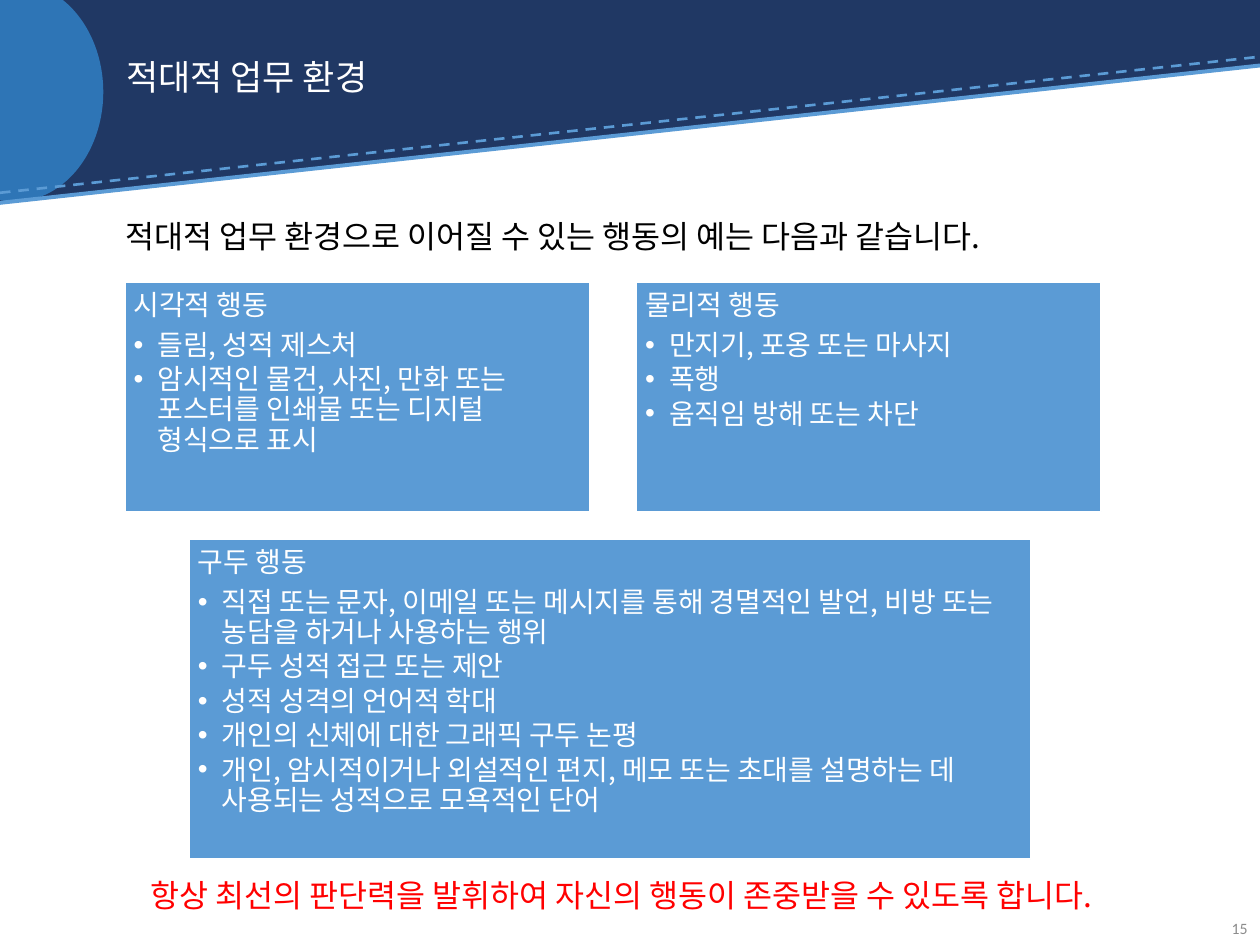
from lxml.etree import SubElement as Sub
from pptx import Presentation
from pptx.dml.color import RGBColor as Rgb
from pptx.enum.dml import MSO_LINE as Dash
from pptx.enum.shapes import MSO_CONNECTOR as Link, MSO_SHAPE as Kind
from pptx.enum.text import MSO_ANCHOR as Anchor, MSO_AUTO_SIZE as Auto, PP_ALIGN as Align
from pptx.oxml.ns import qn
from pptx.util import Inches, Pt

theme = {
    "navy": Rgb.from_string("203864"), "disc": Rgb.from_string("2E75B6"),
    "sky": Rgb.from_string("5B9BD5"), "white": Rgb.from_string("FFFFFF"),
    "black": Rgb.from_string("000000"), "red": Rgb.from_string("FF0000"),
    "gray": Rgb.from_string("8C8C8C"),
    "title": 20, "lead": 18, "body": 16, "page": 9,
    "font": "Noto Sans CJK KR", "digit": "Calibri",
}

deck = Presentation()
deck.slide_width, deck.slide_height = Inches(10), Inches(7.5)
col, row = deck.slide_width / 100, deck.slide_height / 75
slide = deck.slides.add_slide(deck.slide_layouts[5])
shapes = slide.shapes


def grid(x, y, w, h):
    return [round(n) for n in (x * col, y * row, w * col, h * row)]


def write(frame, text, size="body", color="white", font="font", align=Align.LEFT,
          first=True, bullet=False, line=None, after=0):
    para = frame.paragraphs[0] if first else frame.add_paragraph()
    para.alignment, para.line_spacing = align, line
    para.space_before, para.space_after = Pt(0), Pt(after)
    if bullet:
        para.level = 1
        props = para._p.get_or_add_pPr()
        props.set("marL", str(Inches(0.19)))
        props.set("indent", str(-Inches(0.19)))
        Sub(props, qn("a:buFont")).set("typeface", "Arial")
        Sub(props, qn("a:buChar")).set("char", "•")
    run = para.add_run()
    run.text = text
    run.font.size, run.font.name = Pt(theme[size]), theme[font]
    run.font.color.rgb = theme[color]
    Sub(run._r.get_or_add_rPr(), qn("a:ea")).set("typeface", theme[font])


for kind, place, fill in (
    (Kind.RECTANGLE, (0, 0, 100, 5.2), "navy"),
    (Kind.RIGHT_TRIANGLE, (0, 5.1, 100, 10.9), "navy"),
    (Kind.OVAL, (-5.9, -1.4, 14.1, 17.4), "disc"),
):
    part = shapes.add_shape(kind, *grid(*place))
    part.shadow.inherit = False
    part.fill.solid()
    part.fill.fore_color.rgb = theme[fill]
    part.line.fill.background()
    if kind == Kind.RIGHT_TRIANGLE:
        part._element.spPr.xfrm.set("flipV", "1")

for left, right, width, dash in (
    (15.3, 4.5, 1.5, Dash.DASH),
    (16.1, 5.2, 2.25, Dash.SOLID),
):
    edge = shapes.add_connector(Link.STRAIGHT, *grid(0, left, 100, right))
    edge.line.color.rgb = theme["sky"]
    edge.line.width, edge.line.dash_style = Pt(width), dash
    Sub(edge._element.spPr, qn("a:effectLst"))

title = shapes.title
title.left, title.top, title.width, title.height = grid(9, 2, 80.5, 8.6)
title.text_frame.vertical_anchor = Anchor.MIDDLE
write(title.text_frame, "적대적 업무 환경", size="title", line=0.9)
shapes._spTree.append(title._element)

for text, place, style in (
    ("15", (94.7, 71.7, 5.3, 4),
     dict(size="page", color="gray", font="digit", align=Align.RIGHT)),
    ("항상 최선의 판단력을 발휘하여 자신의 행동이 존중받을 수 있도록 합니다.",
     (4.1, 69, 90.4, 4), dict(size="lead", color="red", align=Align.CENTER)),
    ("적대적 업무 환경으로 이어질 수 있는 행동의 예는 다음과 같습니다.",
     (9, 16.7, 85.8, 4), dict(size="lead", color="black")),
):
    frame = shapes.add_textbox(*grid(*place)).text_frame
    frame.word_wrap = True
    if text == "15":
        frame.vertical_anchor = Anchor.MIDDLE
    else:
        frame.auto_size = Auto.SHAPE_TO_FIT_TEXT
    write(frame, text, **style)

cards = (
    ((9.9, 22.4, 36.9, 18.2), "시각적 행동", (
        "들림, 성적 제스처",
        "암시적인 물건, 사진, 만화 또는 포스터를 인쇄물 또는 디지털 형식으로 표시",
    )),
    ((50.5, 22.4, 36.9, 18.2), "물리적 행동", (
        "만지기, 포옹 또는 마사지",
        "폭행",
        "움직임 방해 또는 차단",
    )),
    ((15, 42.8, 66.8, 25.4), "구두 행동", (
        "직접 또는 문자, 이메일 또는 메시지를 통해 경멸적인 발언, 비방 또는 농담을 하거나 사용하는 행위",
        "구두 성적 접근 또는 제안",
        "성적 성격의 언어적 학대",
        "개인의 신체에 대한 그래픽 구두 논평",
        "개인, 암시적이거나 외설적인 편지, 메모 또는 초대를 설명하는 데 사용되는 성적으로 모욕적인 단어",
    )),
)
for place, head, items in cards:
    card = shapes.add_shape(Kind.RECTANGLE, *grid(*place))
    card.shadow.inherit = False
    card.fill.solid()
    card.fill.fore_color.rgb = theme["sky"]
    card.line.color.rgb, card.line.width = theme["white"], Pt(1)
    frame = card.text_frame
    frame.word_wrap, frame.vertical_anchor = True, Anchor.TOP
    frame.margin_left = frame.margin_right = Inches(0.07)
    frame.margin_top = frame.margin_bottom = Inches(0.07)
    write(frame, head, line=0.9, after=5.6)
    for item in items:
        write(frame, item, first=False, bullet=True, line=0.9, after=2.4)

deck.save("out.pptx")
